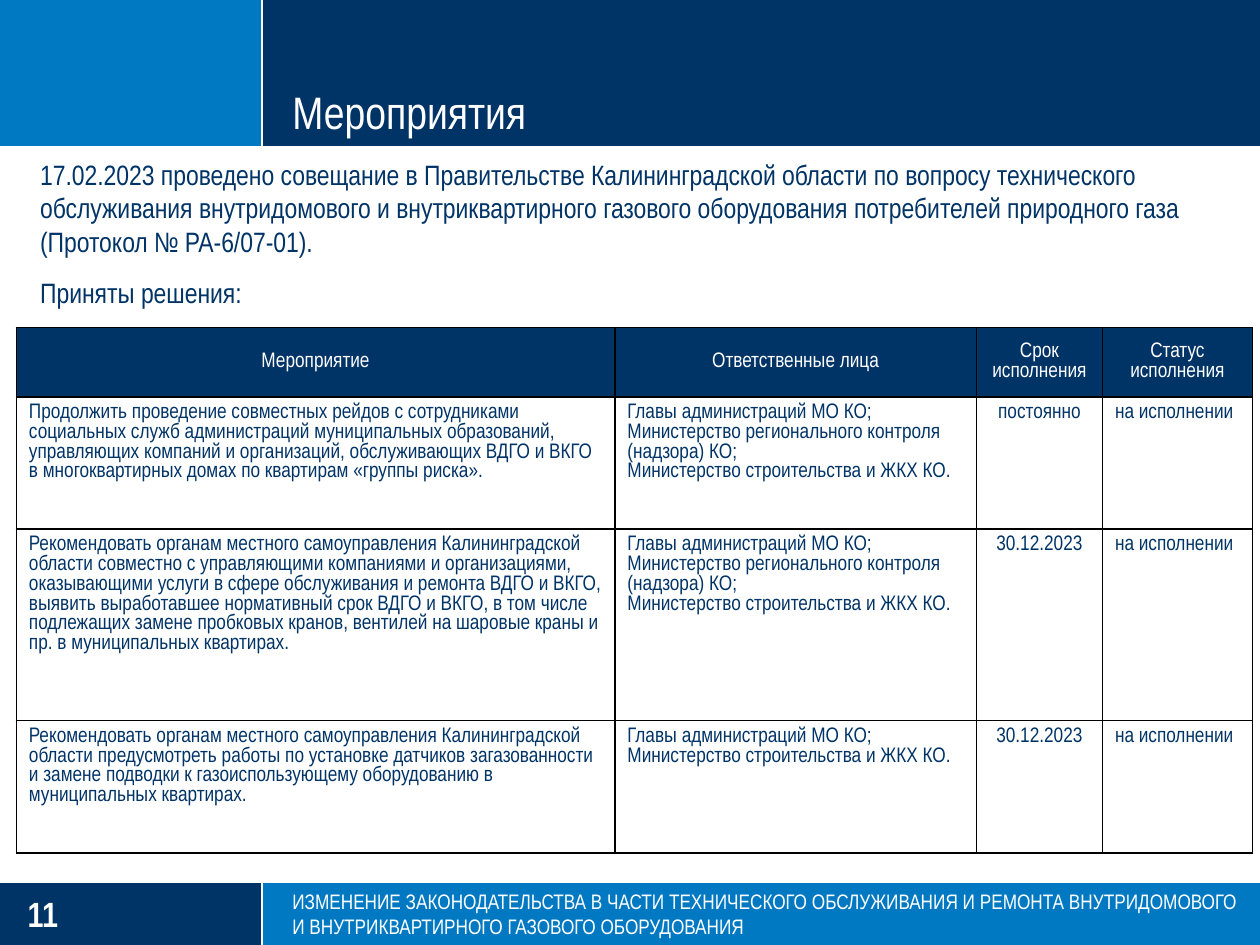
"""Build the slide on measures for gas equipment maintenance."""
from lxml import etree
from pptx import Presentation, util as u
from pptx.dml.color import RGBColor
from pptx.enum import shapes, text
from pptx.oxml.ns import qn

THEME = {
    "font": "Arial Narrow",
    "navy": RGBColor.from_string("003366"),
    "blue": RGBColor.from_string("0079C2"),
    "white": RGBColor.from_string("FFFFFF"),
    "border": "000000",
    "title": 26, "number": 20, "intro": 16, "small": 12,
}
WIDTH, HEIGHT = 10, 7.5
SPLIT, HEADER, FOOTER = 2.08, 1.17, 7
MARGIN, CONTENT = 0.22, 2.32

HEADINGS = ["Мероприятие", "Ответственные лица", "Срок исполнения", "Статус исполнения"]
HEADS = "Главы администраций МО КО;"
CONTROL = "Министерство регионального контроля (надзора) КО;"
BUILDING = "Министерство строительства и ЖКХ КО."
STATUS = "на исполнении"
MEASURES = [
    ["Продолжить проведение совместных рейдов с сотрудниками социальных служб администраций "
     "муниципальных образований, управляющих компаний и организаций, обслуживающих ВДГО и ВКГО "
     "в многоквартирных домах по квартирам «группы риска».",
     "\n".join([HEADS, CONTROL, BUILDING]), "постоянно", STATUS],
    ["Рекомендовать органам местного самоуправления Калининградской области совместно с "
     "управляющими компаниями и организациями, оказывающими услуги в сфере обслуживания и ремонта "
     "ВДГО и ВКГО, выявить выработавшее нормативный срок ВДГО и ВКГО, в том числе подлежащих замене "
     "пробковых кранов, вентилей на шаровые краны и пр. в муниципальных квартирах.",
     "\n".join([HEADS, CONTROL, BUILDING]), "30.12.2023", STATUS],
    ["Рекомендовать органам местного самоуправления Калининградской области предусмотреть работы "
     "по установке датчиков загазованности и замене подводки к газоиспользующему оборудованию "
     "в муниципальных квартирах.",
     "\n".join([HEADS, BUILDING]), "30.12.2023", STATUS],
]
COLUMNS = [4.75, 2.87, 1, 1.19]
ROWS = [0.55, 1.05, 1.52, 1.05]


def write(frame, content, size, color, align=text.PP_ALIGN.LEFT, bold=False):
    frame.text = content
    for paragraph in frame.paragraphs:
        paragraph.alignment = align
        paragraph.line_spacing = 1.0
        paragraph.space_before = u.Pt(0)
        for run in paragraph.runs:
            run.font.name = THEME["font"]
            run.font.size = u.Pt(THEME[size])
            run.font.color.rgb = THEME[color]
            run.font.bold = bold


def place(shape, left, top, width, height, anchor, inset=0):
    shape.left, shape.top, shape.width, shape.height = map(u.Inches, (left, top, width, height))
    frame = shape.text_frame
    frame.word_wrap = True
    frame.auto_size = text.MSO_AUTO_SIZE.NONE
    frame.vertical_anchor = anchor
    frame.margin_left = frame.margin_right = u.Inches(inset)
    frame.margin_top = frame.margin_bottom = u.Inches(inset / 2)
    return frame


presentation = Presentation()
presentation.slide_width, presentation.slide_height = u.Inches(WIDTH), u.Inches(HEIGHT)
slide = presentation.slides.add_slide(presentation.slide_layouts[1])

for left, top, right, bottom, color in [
    (0, FOOTER, SPLIT, HEIGHT, "navy"),
    (SPLIT, FOOTER, WIDTH, HEIGHT, "blue"),
    (0, 0, SPLIT, HEADER, "blue"),
    (SPLIT, 0, WIDTH, HEADER, "navy"),
]:
    band = slide.shapes.add_shape(
        shapes.MSO_SHAPE.RECTANGLE, *map(u.Inches, (left, top, right - left, bottom - top)))
    band.shadow.inherit = False
    band.fill.solid()
    band.fill.fore_color.rgb = THEME[color]
    band.line.fill.background()

for ends in [(0, HEADER, WIDTH, HEADER), (SPLIT, FOOTER, SPLIT, HEIGHT),
             (0, FOOTER, WIDTH, FOOTER), (SPLIT, 0, SPLIT, HEADER)]:
    divider = slide.shapes.add_connector(shapes.MSO_CONNECTOR.STRAIGHT, *map(u.Inches, ends))
    divider.line.color.rgb = THEME["white"]
    divider.line.width = u.Pt(1.25)
    etree.SubElement(divider._element.spPr, qn("a:effectLst"))

page_number = slide.shapes.add_textbox(0, 0, 0, 0)
frame = place(page_number, MARGIN, 7.08, 1.63, 0.34, text.MSO_ANCHOR.MIDDLE)
write(frame, "11", "number", "white", bold=True)

table_frame = slide.shapes.add_table(
    len(ROWS), len(COLUMNS), *map(u.Inches, (0.13, 2.6, sum(COLUMNS), sum(ROWS))))
table = table_frame.table
for column, width in zip(table.columns, COLUMNS):
    column.width = u.Inches(width)
for row, height in zip(table.rows, ROWS):
    row.height = u.Inches(height)

for row_index, values in enumerate([HEADINGS] + MEASURES):
    heading = row_index == 0
    for column_index, value in enumerate(values):
        cell = table.cell(row_index, column_index)
        centred = heading or column_index == 2
        write(cell.text_frame, value, "small", "white" if heading else "navy",
              text.PP_ALIGN.CENTER if centred else text.PP_ALIGN.LEFT)
        cell.vertical_anchor = text.MSO_ANCHOR.MIDDLE if heading else text.MSO_ANCHOR.TOP
        properties = cell._tc.get_or_add_tcPr()
        for side in ("lnL", "lnR", "lnT", "lnB"):
            border = etree.SubElement(properties, qn(f"a:{side}"), w=str(u.Pt(1)))
            fill = etree.SubElement(border, qn("a:solidFill"))
            etree.SubElement(fill, qn("a:srgbClr"), val=THEME["border"])
        if heading:
            cell.fill.solid()
            cell.fill.fore_color.rgb = THEME["navy"]
        else:
            cell.fill.background()

title, footer = slide.shapes.title, slide.placeholders[1]
for placeholder in (footer, title):
    slide.shapes._spTree.append(placeholder._element)

frame = place(footer, CONTENT, 7.05, 7.51, 0.4, text.MSO_ANCHOR.MIDDLE)
write(frame, "ИЗМЕНЕНИЕ ЗАКОНОДАТЕЛЬСТВА В ЧАСТИ ТЕХНИЧЕСКОГО ОБСЛУЖИВАНИЯ И РЕМОНТА "
      "ВНУТРИДОМОВОГО И ВНУТРИКВАРТИРНОГО ГАЗОВОГО ОБОРУДОВАНИЯ", "small", "white")
properties = frame.paragraphs[0]._p.get_or_add_pPr()
properties.set("marL", "0")
properties.set("indent", "0")
etree.SubElement(properties, qn("a:buNone"))

frame = place(title, CONTENT, 0, 7.43, 1.1, text.MSO_ANCHOR.BOTTOM)
write(frame, "Мероприятия", "title", "white")

intro = slide.shapes.add_textbox(0, 0, 0, 0)
frame = place(intro, MARGIN, 1.2, 9.61, 1.58, text.MSO_ANCHOR.TOP, 0.1)
write(frame, "17.02.2023 проведено совещание в Правительстве Калининградской области по вопросу "
      "технического обслуживания внутридомового и внутриквартирного газового оборудования "
      "потребителей природного газа (Протокол № РА-6/07-01).\nПриняты решения:", "intro", "navy")
frame.paragraphs[1].space_before = u.Pt(10)

presentation.save("out.pptx")
